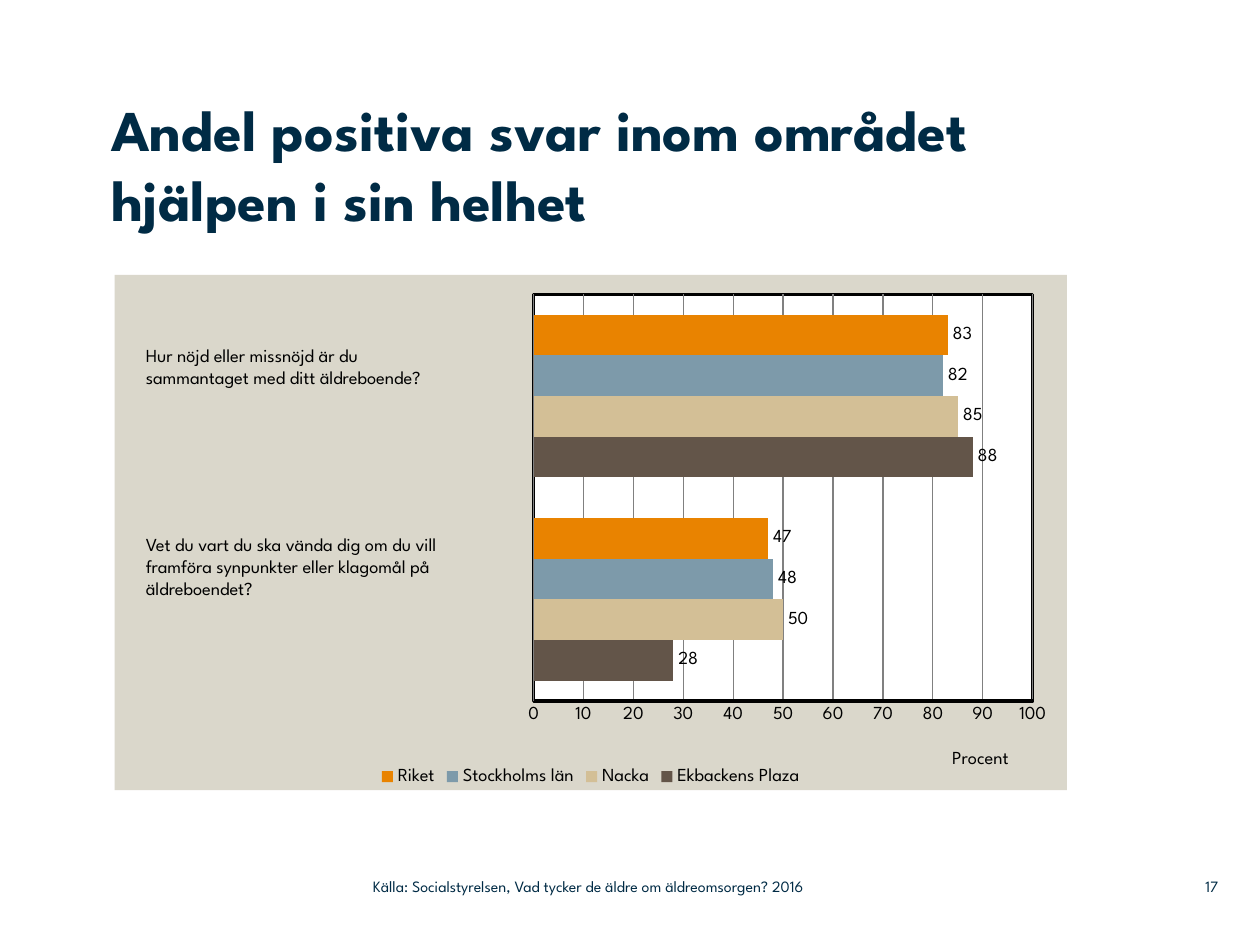
from dataclasses import dataclass
from typing import Any

from lxml import etree
from pptx import Presentation
from pptx.chart.data import CategoryChartData
from pptx.dml.color import RGBColor
from pptx.enum.chart import (
    XL_CHART_TYPE as ChartType,
    XL_LABEL_POSITION as LabelPos,
    XL_LEGEND_POSITION as LegendPos,
    XL_TICK_MARK as Tick,
)
from pptx.enum.text import MSO_ANCHOR as Anchor, MSO_AUTO_SIZE as AutoSize, PP_ALIGN as Align
from pptx.oxml import parse_xml
from pptx.oxml.ns import nsdecls, qn
from pptx.util import Cm, Pt

FONT = "League Spartan"
COLORS = {
    "navy": "002B45",
    "black": "000000",
    "white": "FFFFFF",
    "panel": "DAD7CB",
    "grid": "808080",
    "orange": "E98300",
    "blue": "7D9AAA",
    "sand": "D3BF96",
    "brown": "635549",
}


@dataclass
class TextBlock:
    lines: list[str]
    box: tuple[float, float, float, float]
    size: float = 10.5
    color: str = "black"
    bold: bool = False
    inset: bool = False
    grow: bool = False
    anchor: Any = Anchor.TOP
    align: Any = Align.LEFT


@dataclass
class Series:
    name: str
    values: tuple[int, int]
    color: str


TEXTS = [
    TextBlock(["Andel positiva svar inom området hjälpen i sin helhet"],
              (2.24, 1.9, 19.3, 3.61), 33, "navy", bold=True),
    TextBlock(["Hur nöjd eller missnöjd är du", "sammantaget med ditt äldreboende?"],
              (2.69, 6.81, 7.57, 1.14), inset=True, grow=True),
    TextBlock(["Vet du vart du ska vända dig om du vill framföra synpunkter "
               "eller klagomål på äldreboendet?"],
              (2.69, 10.62, 7.54, 1.6), inset=True, grow=True),
    TextBlock(["17"], (23.37, 17.5, 1.19, 0.74), 9, "navy",
              anchor=Anchor.MIDDLE, align=Align.RIGHT),
    TextBlock(["Källa: Socialstyrelsen, Vad tycker de äldre om äldreomsorgen? 2016"],
              (7.52, 17.5, 11.25, 0.74), 9, "navy", anchor=Anchor.MIDDLE),
]

SERIES = [
    Series("Ekbackens Plaza", (28, 88), "brown"),
    Series("Nacka", (50, 85), "sand"),
    Series("Stockholms län", (48, 82), "blue"),
    Series("Riket", (47, 83), "orange"),
]


def rgb(name: str) -> RGBColor:
    return RGBColor.from_string(COLORS[name])


def set_font(font: Any, size: float, color: str, bold: bool = False) -> None:
    for key, value in {"name": FONT, "size": Pt(size), "bold": bold}.items():
        setattr(font, key, value)
    font.color.rgb = rgb(color)


def add_text(slide: Any, block: TextBlock) -> None:
    tf = slide.shapes.add_textbox(*map(Cm, block.box)).text_frame
    formats = {
        "word_wrap": True,
        "auto_size": AutoSize.SHAPE_TO_FIT_TEXT if block.grow else AutoSize.NONE,
        "vertical_anchor": block.anchor,
    }
    if not block.inset:
        formats |= {f"margin_{side}": 0 for side in ("left", "top", "right", "bottom")}
    for key, value in formats.items():
        setattr(tf, key, value)
    for i, line in enumerate(block.lines):
        p = tf.paragraphs[0] if i == 0 else tf.add_paragraph()
        p.alignment = block.align
        r = p.add_run()
        r.text = line
        set_font(r.font, block.size, block.color, block.bold)


def fill_xml(fill: str, border: str) -> etree._Element:
    return parse_xml(
        f'<c:spPr {nsdecls("c", "a")}><a:solidFill><a:srgbClr val="{COLORS[fill]}"/>'
        f"</a:solidFill>{border}</c:spPr>"
    )


def layout_xml(inner: bool = False, **position: float) -> etree._Element:
    target = '<c:layoutTarget val="inner"/>' if inner else ""
    modes = "".join(f'<c:{k}Mode val="edge"/>' for k in ("x", "y"))
    values = "".join(f'<c:{k} val="{v}"/>' for k, v in position.items())
    return parse_xml(
        f'<c:layout {nsdecls("c")}><c:manualLayout>{target}{modes}{values}'
        "</c:manualLayout></c:layout>"
    )


def drop_layout(parent: etree._Element) -> None:
    for old in parent.findall(qn("c:layout")):
        parent.remove(old)


def style_value_axis(axis: Any) -> None:
    formats = {
        "minimum_scale": 0,
        "maximum_scale": 100,
        "major_unit": 10,
        "major_tick_mark": Tick.NONE,
        "minor_tick_mark": Tick.NONE,
        "has_major_gridlines": True,
    }
    for key, value in formats.items():
        setattr(axis, key, value)
    set_font(axis.tick_labels.font, 10.5, "black")
    for line, color, width in ((axis.format.line, "black", 2),
                               (axis.major_gridlines.format.line, "grid", 0.75)):
        line.color.rgb = rgb(color)
        line.width = Pt(width)
    p = axis.axis_title.text_frame.paragraphs[0]
    r = p.add_run()
    r.text = "Procent"
    set_font(r.font, 10.5, "black")
    title = axis.axis_title._element
    drop_layout(title)
    title.find(qn("c:tx")).addnext(layout_xml(x=0.876, y=0.914))


def add_bar_chart(slide: Any) -> None:
    data = CategoryChartData()
    data.categories = ["1", "2"]
    for item in SERIES:
        data.add_series(item.name, item.values)
    box = map(Cm, (2.31, 5.54, 19.2, 10.39))
    chart = slide.shapes.add_chart(ChartType.BAR_CLUSTERED, *box, data).chart
    set_font(chart.font, 10.5, "black")
    chart.has_title = False
    chart.has_legend = True
    chart.legend.position = LegendPos.BOTTOM
    chart.legend.include_in_layout = False
    set_font(chart.legend.font, 10.5, "black")
    chart.category_axis.visible = False
    style_value_axis(chart.value_axis)

    plot = chart.plots[0]
    for key, value in {"gap_width": 100, "overlap": 0, "vary_by_categories": False}.items():
        setattr(plot, key, value)
    for s, item in zip(plot.series, SERIES):
        s.format.fill.solid()
        s.format.fill.fore_color.rgb = rgb(item.color)
        s.data_labels.show_value = True
        s.data_labels.position = LabelPos.OUTSIDE_END
        set_font(s.data_labels.font, 10.5, "black")

    root = chart._chartSpace
    area = root.find(qn("c:chart")).find(qn("c:plotArea"))
    drop_layout(area)
    area.insert(0, layout_xml(True, x=0.44, y=0.038, w=0.524, h=0.789))
    border = f'<a:ln w="{Pt(2)}"><a:solidFill><a:srgbClr val="{COLORS["black"]}"/></a:solidFill></a:ln>'
    area.append(fill_xml("white", border))
    root.find(qn("c:chart")).addnext(fill_xml("panel", "<a:ln><a:noFill/></a:ln>"))


def main() -> None:
    prs = Presentation()
    prs.slide_width, prs.slide_height = Cm(25.4), Cm(19.05)
    slide = prs.slides.add_slide(prs.slide_layouts[6])
    add_bar_chart(slide)
    for block in TEXTS:
        add_text(slide, block)
    prs.save("out.pptx")


if __name__ == "__main__":
    main()
